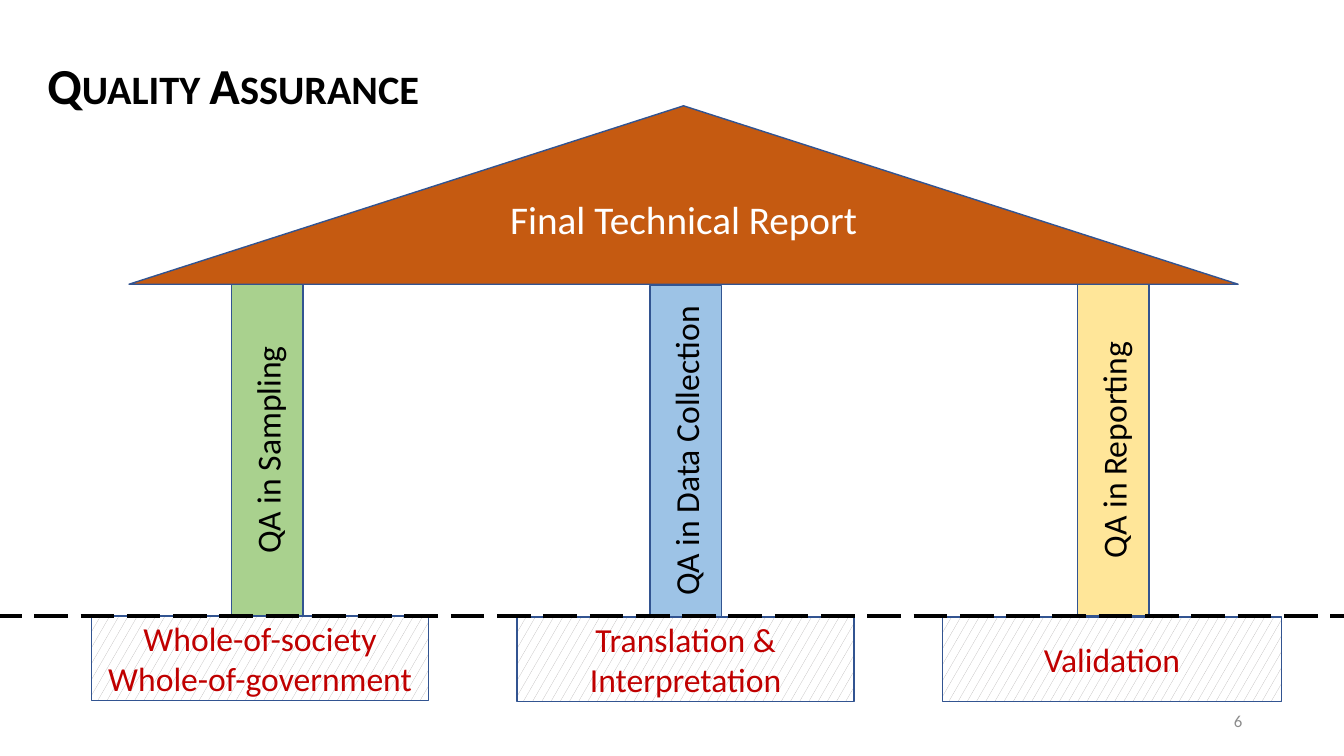
from pptx import Presentation, util as u
from pptx.dml.color import RGBColor
from pptx.enum import dml, shapes as s, text as t
from lxml import etree

PX = 9144  # 100 px to the inch
INK = {"black": "000000", "white": "FFFFFF", "grey": "8C8C8C", "edge": "325491",
       "roof": "C55A11", "green": "A9D18E", "blue": "9DC3E6", "gold": "FFE699",
       "red": "C00000", "hatch": "AFABAB"}


def rgb(name):
    return RGBColor.from_string(INK[name])


def write(frame, words, size=24, ink="black", bold=False,
          align=t.PP_ALIGN.CENTER, anchor=t.MSO_ANCHOR.MIDDLE):
    frame.word_wrap = True
    frame.vertical_anchor = anchor
    frame.text = words
    for para in frame.paragraphs:
        para.alignment = align
        for run in para.runs:
            font = run.font
            font.name, font.size, font.bold = "Calibri", u.Pt(size), bold
            font.color.rgb = rgb(ink)


deck = Presentation()
deck.slide_width, deck.slide_height = 1333 * PX, 750 * PX
slide = deck.slides.add_slide(deck.slide_layouts[5])
tree = slide.shapes

# Title
title = tree.title
title.left, title.top, title.width, title.height = [n * PX for n in (35, 49, 1185, 71)]
write(title.text_frame, "Quality Assurance", size=36, bold=True,
      align=t.PP_ALIGN.LEFT, anchor=t.MSO_ANCHOR.TOP)
title.text_frame.auto_size = t.MSO_AUTO_SIZE.SHAPE_TO_FIT_TEXT
head = title.text_frame.paragraphs[0]
head._p.get_or_add_pPr().set("marL", str(2 * PX))
head.runs[0].font._element.set("cap", "small")

# Slide number
num = tree.add_textbox(942 * PX, 695 * PX, 300 * PX, 40 * PX)
write(num.text_frame, "6", size=12, ink="grey", align=t.PP_ALIGN.RIGHT)

# Pillars, roof and bases
KIND = s.MSO_SHAPE
parts = [
    (KIND.ROUNDED_RECTANGLE, 101, 411, 328, 71, "green", "QA in Sampling"),
    (KIND.ROUNDED_RECTANGLE, 516, 412, 328, 71, "blue", "QA in Data Collection"),
    (KIND.ROUNDED_RECTANGLE, 940, 411, 328, 71, "gold", "QA in Reporting"),
    (KIND.ISOSCELES_TRIANGLE, 128, 105, 1100, 177, "roof", "Final Technical Report"),
    (KIND.RECTANGLE, 91, 611, 334, 84, "hatch", "Whole-of-society\nWhole-of-government"),
    (KIND.RECTANGLE, 513, 612, 334, 84, "hatch", "Translation & Interpretation"),
    (KIND.RECTANGLE, 935, 612, 336, 84, "hatch", "Validation"),
]
for kind, x, y, w, h, fill, words in parts:
    part = tree.add_shape(kind, x * PX, y * PX, w * PX, h * PX)
    part.shadow.inherit = False
    part.line.color.rgb = rgb("edge")
    part.line.width = u.Pt(1)
    if fill == "hatch":
        part.fill.patterned()
        part.fill.pattern = dml.MSO_PATTERN.SMALL_CONFETTI
        part.fill.fore_color.rgb = rgb("hatch")
        part.fill.back_color.rgb = rgb("white")
        write(part.text_frame, words, ink="red")
        continue
    part.fill.solid()
    part.fill.fore_color.rgb = rgb(fill)
    if fill == "roof":
        write(part.text_frame, words, size=28, ink="white", anchor=t.MSO_ANCHOR.TOP)
        part.text_frame.margin_top = 0
    else:
        part.adjustments[0] = 0
        part.rotation = 270
        write(part.text_frame, words)

# Ground line
ground = tree.add_connector(s.MSO_CONNECTOR.STRAIGHT, -12 * PX, 611 * PX, 1333 * PX, 611 * PX)
ground.line.color.rgb = rgb("black")
ground.line.width = u.Pt(3)
ground.line.dash_style = dml.MSO_LINE.LONG_DASH
props = ground._element.spPr
etree.SubElement(props, "{http://schemas.openxmlformats.org/drawingml/2006/main}effectLst")

deck.save("out.pptx")
